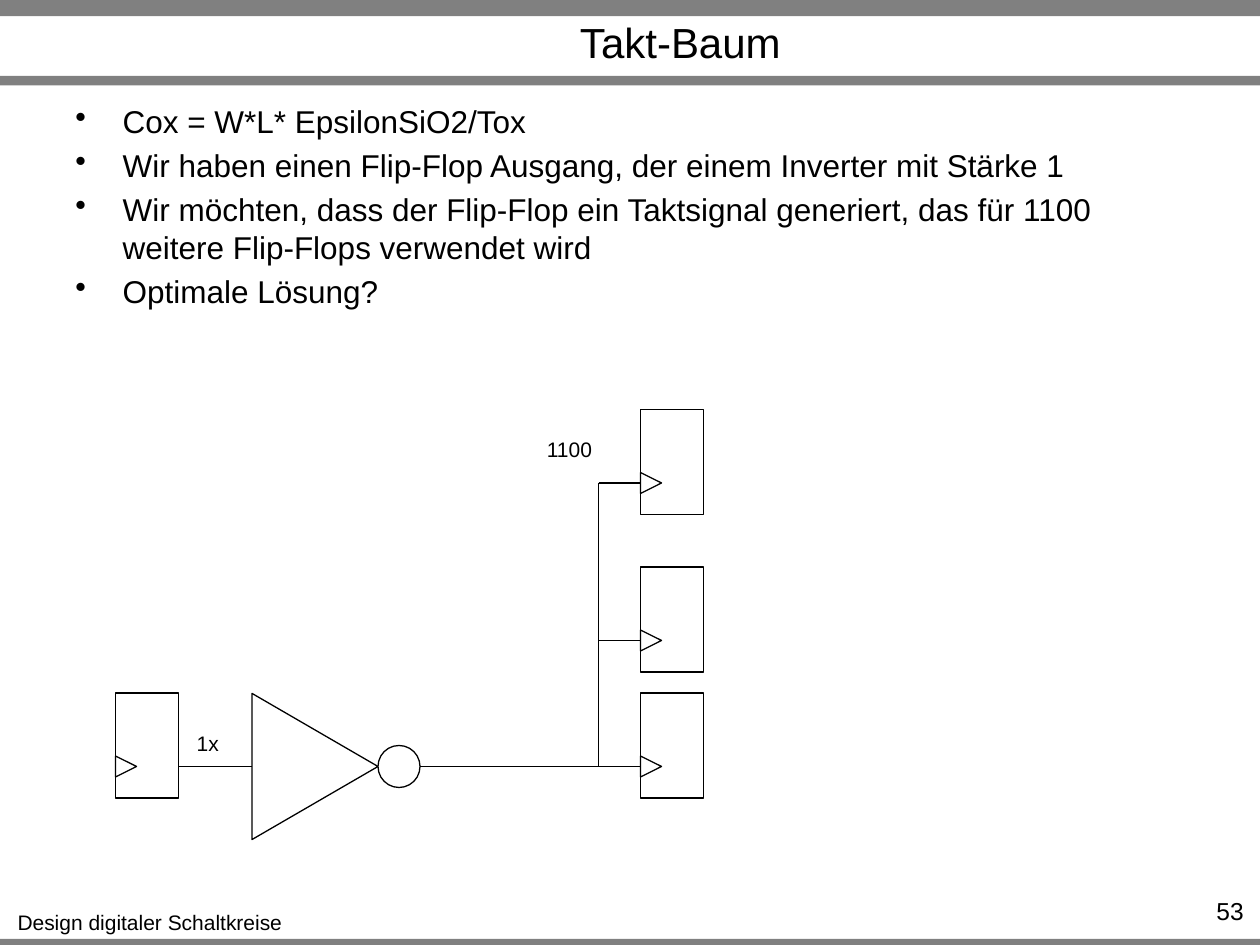
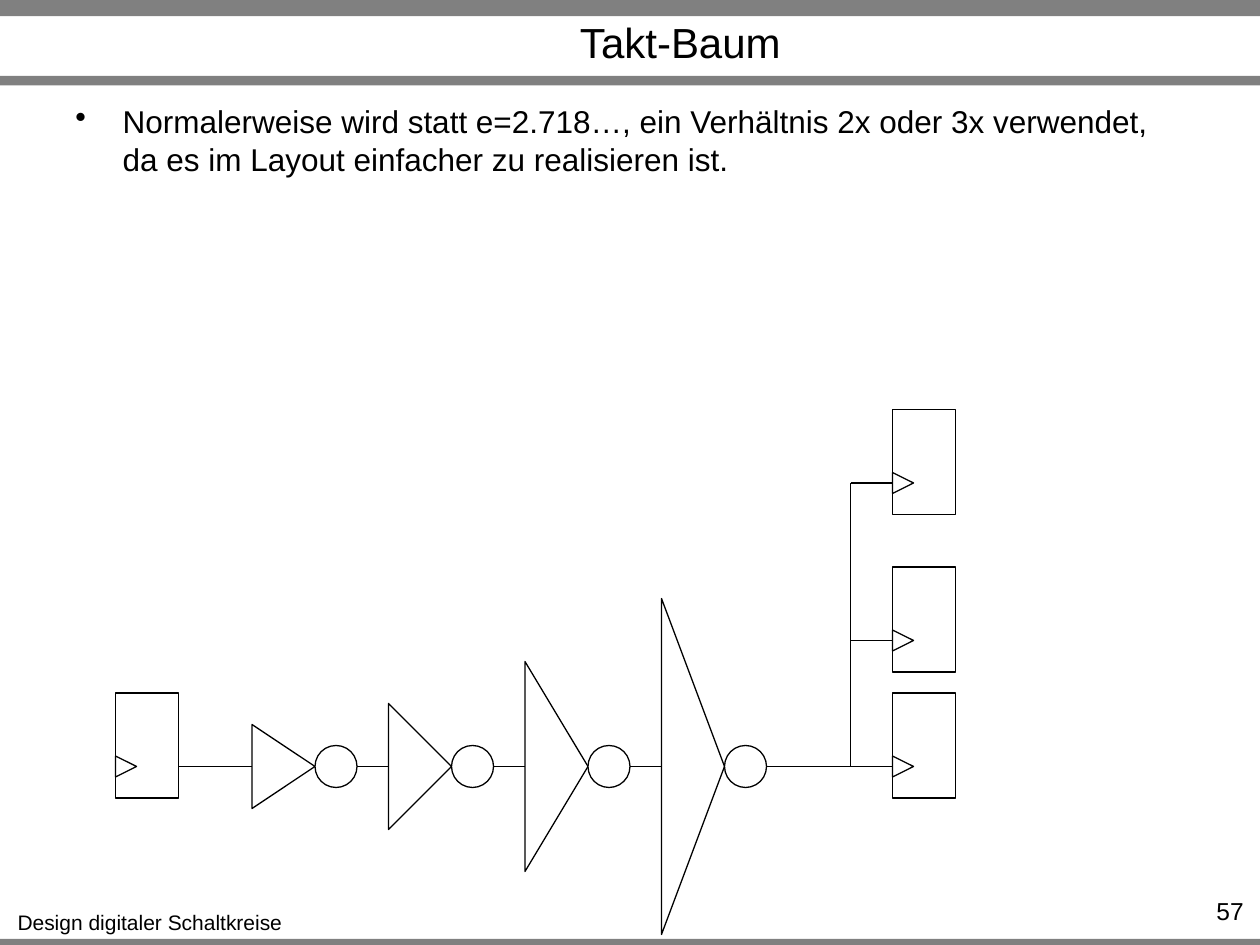
from dataclasses import dataclass

import pptx
import pptx.dml.color
import pptx.enum.shapes
import pptx.enum.text
import pptx.oxml.ns
import pptx.util
from lxml import etree

Pt = pptx.util.Pt
Shape = pptx.enum.shapes.MSO_SHAPE
Align = pptx.enum.text.PP_ALIGN
Anchor = pptx.enum.text.MSO_ANCHOR

# Shared look, lengths in points
FONT = "Arial"
BLACK, WHITE, GRAY = "000000", "FFFFFF", "808080"
SLIDE_WIDTH, SLIDE_HEIGHT = 720, 540
BANDS = [(0, 9.25), (43.4, 5.5), (536.5, 5.5)]  # top, height
LINE_WIDTH = 0.75
BULLET_INDENT = 27

# Circuit geometry
AXIS = 438
FLIP_FLOP_WIDTH, FLIP_FLOP_HEIGHT = 36, 60
CLOCK_SIZE, CLOCK_OFFSET = 12, 42
SOURCE_LEFT = 66
BUBBLE_SIZE = 24
BUS_GAP = 24
LEAF_CLOCKS = [AXIS, 366, 276]


@dataclass
class Label:
    text: str
    left: float
    top: float
    width: float
    height: float
    size: float = 12
    align: int = Align.CENTER
    anchor: int = Anchor.TOP
    wrap: bool = False


@dataclass
class Inverter:
    left: float
    length: float
    height: float


@dataclass
class ClockTree:
    page: str
    bullets: list[str]
    inverters: list[Inverter]
    leaf_left: float
    labels: list[Label]


TITLE = Label("Takt-Baum", 93.6, 10, 590.4, 27.5, 24, anchor=Anchor.MIDDLE, wrap=True)
FOOTER = Label("Design digitaler Schaltkreise", 2.2, 516.2, 167, 21.6)

SLIDES = [
    ClockTree(
        page="53",
        bullets=[
            "Cox = W*L* EpsilonSiO2/Tox",
            "Wir haben einen Flip-Flop Ausgang, der einem Inverter mit Stärke 1",
            "Wir möchten, dass der Flip-Flop ein Taktsignal generiert, "
            "das für 1100 weitere Flip-Flops verwendet wird",
            "Optimale Lösung?",
        ],
        inverters=[Inverter(144, 72, 83.5)],
        leaf_left=366,
        labels=[
            Label("1x", 105, 414, 27.4, 21.6),
            Label("1100", 305.3, 246, 40.3, 21.6),
        ],
    ),
    ClockTree(
        page="57",
        bullets=[
            "Normalerweise wird statt e=2.718…, ein Verhältnis 2x oder 3x "
            "verwendet, da es im Layout einfacher zu realisieren ist.",
        ],
        inverters=[
            Inverter(144 + 78 * stage, 36, height)
            for stage, height in enumerate([48, 72, 120, 192])
        ],
        leaf_left=510,
        labels=[],
    ),
]


def color(value: str) -> pptx.dml.color.RGBColor:
    return pptx.dml.color.RGBColor.from_string(value)


def add_run(paragraph, text: str, size: float) -> None:
    run = paragraph.add_run()
    run.text = text
    run.font.name = FONT
    run.font.size = Pt(size)
    run.font.color.rgb = color(BLACK)


def add_label(slide, label: Label) -> None:
    box = slide.shapes.add_textbox(
        Pt(label.left), Pt(label.top), Pt(label.width), Pt(label.height))
    frame = box.text_frame
    frame.word_wrap = label.wrap
    frame.vertical_anchor = label.anchor
    paragraph = frame.paragraphs[0]
    paragraph.alignment = label.align
    add_run(paragraph, label.text, label.size)


def add_bullets(slide, texts: list[str]) -> None:
    box = slide.shapes.add_textbox(Pt(36), Pt(54.75), Pt(648), Pt(101.5))
    frame = box.text_frame
    frame.word_wrap = True
    for index, text in enumerate(texts):
        paragraph = frame.add_paragraph() if index else frame.paragraphs[0]
        if index:
            paragraph.space_before = Pt(3.6)
        properties = paragraph._p.get_or_add_pPr()
        properties.set("marL", str(Pt(BULLET_INDENT)))
        properties.set("indent", str(-Pt(BULLET_INDENT)))
        bullet = etree.SubElement(properties, pptx.oxml.ns.qn("a:buChar"))
        bullet.set("char", "•")
        add_run(paragraph, text, 18)


def add_outline(shapes, kind, left: float, top: float, width: float, height: float,
                fill: str | None = None, line: str | None = BLACK):
    shape = shapes.add_shape(kind, Pt(left), Pt(top), Pt(width), Pt(height))
    shape.shadow.inherit = False
    if fill:
        shape.fill.solid()
        shape.fill.fore_color.rgb = color(fill)
    else:
        shape.fill.background()
    if line:
        shape.line.color.rgb = color(line)
        shape.line.width = Pt(LINE_WIDTH)
    else:
        shape.line.fill.background()
    return shape


def add_pointer(shapes, left: float, middle: float, length: float, height: float) -> None:
    """Triangle pointing right, described by its visible extent."""
    triangle = add_outline(
        shapes, Shape.ISOSCELES_TRIANGLE,
        left + (length - height) / 2, middle - length / 2, height, length)
    triangle.rotation = 90


def add_wire(slide, x1: float, y1: float, x2: float, y2: float) -> None:
    wire = slide.shapes.add_connector(
        pptx.enum.shapes.MSO_CONNECTOR.STRAIGHT, Pt(x1), Pt(y1), Pt(x2), Pt(y2))
    wire.line.color.rgb = color(BLACK)
    wire.line.width = Pt(LINE_WIDTH)
    etree.SubElement(wire._element.spPr, pptx.oxml.ns.qn("a:effectLst"))


def add_flip_flop(slide, left: float, clock: float) -> None:
    shapes = slide.shapes.add_group_shape().shapes
    add_outline(shapes, Shape.RECTANGLE, left, clock - CLOCK_OFFSET,
                FLIP_FLOP_WIDTH, FLIP_FLOP_HEIGHT)
    add_pointer(shapes, left, clock, CLOCK_SIZE, CLOCK_SIZE)


def add_frame(slide, page: str) -> None:
    for top, height in BANDS:
        add_outline(slide.shapes, Shape.RECTANGLE, 0, top, SLIDE_WIDTH, height,
                    fill=GRAY, line=None)
    page_number = Label(page, 655.2, 508.3, 62.6, 17.3, 14, Align.RIGHT, wrap=True)
    for label in (FOOTER, TITLE, page_number):
        add_label(slide, label)


def add_circuit(slide, tree: ClockTree) -> None:
    # Driving flip-flop and inverter chain
    add_flip_flop(slide, SOURCE_LEFT, AXIS)
    output = SOURCE_LEFT + FLIP_FLOP_WIDTH
    for inverter in tree.inverters:
        add_wire(slide, output, AXIS, inverter.left, AXIS)
        add_pointer(slide.shapes, inverter.left, AXIS, inverter.length, inverter.height)
        tip = inverter.left + inverter.length
        add_outline(slide.shapes, Shape.OVAL, tip, AXIS - BUBBLE_SIZE / 2,
                    BUBBLE_SIZE, BUBBLE_SIZE, fill=WHITE)
        output = tip + BUBBLE_SIZE

    # Bus and driven flip-flops
    bus = tree.leaf_left - BUS_GAP
    add_wire(slide, bus, min(LEAF_CLOCKS), bus, AXIS)
    for clock in LEAF_CLOCKS:
        add_flip_flop(slide, tree.leaf_left, clock)
        start = output if clock == AXIS else bus
        add_wire(slide, start, clock, tree.leaf_left, clock)


def main() -> None:
    presentation = pptx.Presentation()
    presentation.slide_width = Pt(SLIDE_WIDTH)
    presentation.slide_height = Pt(SLIDE_HEIGHT)
    for tree in SLIDES:
        slide = presentation.slides.add_slide(presentation.slide_layouts[6])
        add_frame(slide, tree.page)
        add_bullets(slide, tree.bullets)
        add_circuit(slide, tree)
        for label in tree.labels:
            add_label(slide, label)
    presentation.save("out.pptx")


if __name__ == "__main__":
    main()
